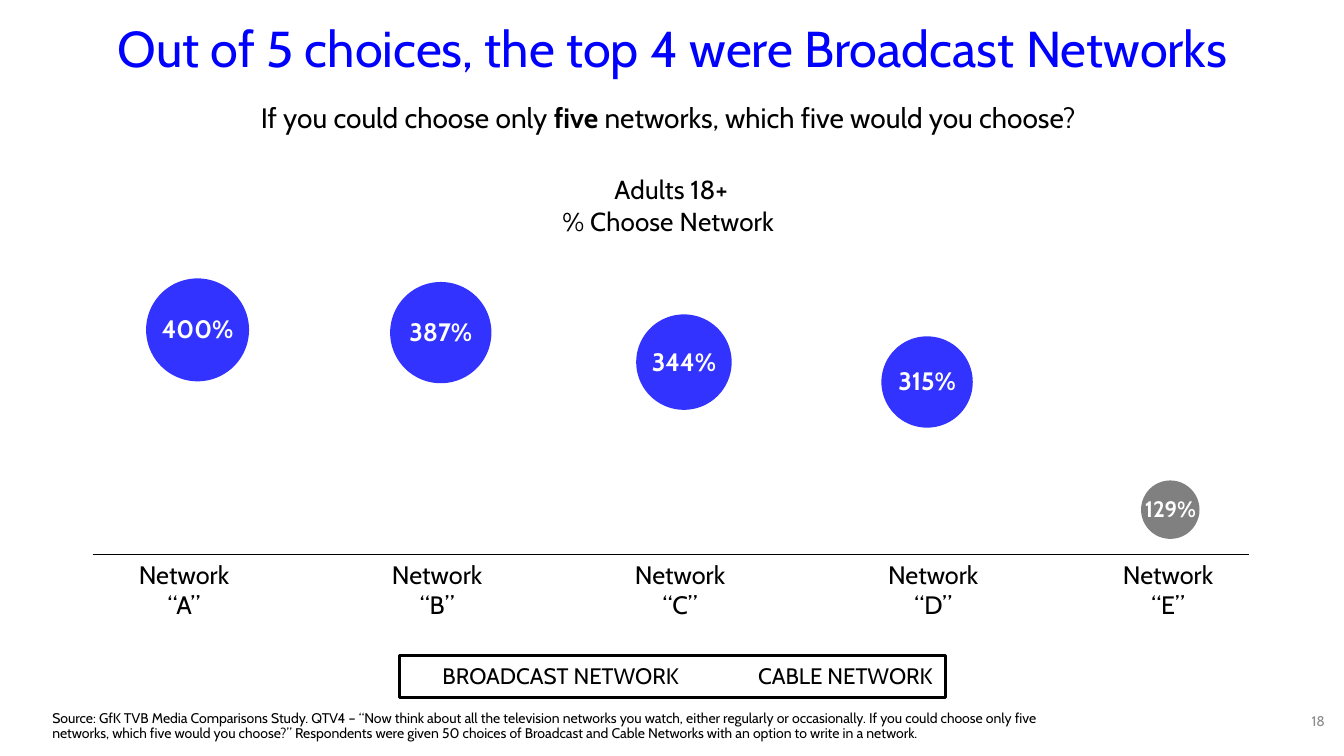
from dataclasses import dataclass

from lxml import etree
from pptx import Presentation
from pptx.chart.data import BubbleChartData
from pptx.dml.color import RGBColor
from pptx.enum import chart as ch, shapes, text
from pptx.oxml import parse_xml
from pptx.oxml.ns import nsdecls, qn
from pptx.util import Inches, Pt


@dataclass(frozen=True)
class Theme:
    font: str = "Cabin"
    black: RGBColor = RGBColor(0, 0, 0)
    white: RGBColor = RGBColor(255, 255, 255)
    title_blue: RGBColor = RGBColor(0, 0, 255)
    broadcast: RGBColor = RGBColor(0x33, 0x33, 0xFF)
    cable: RGBColor = RGBColor(0x80, 0x80, 0x80)
    page_grey: RGBColor = RGBColor(0x8C, 0x8C, 0x8C)
    title: float = 36
    question: float = 20
    chart_title: float = 18.6
    label: float = 18
    legend: float = 16
    small: float = 10


T = Theme()


def style(font, size, color=T.black, bold=False):
    font.name, font.size, font.bold = T.font, Pt(size), bold
    font.color.rgb = color


def add_text(parent, box, words, size, align=text.PP_ALIGN.CENTER,
             anchor=text.MSO_ANCHOR.TOP, color=T.black, wrap=True):
    tf = parent.add_textbox(*map(Inches, box)).text_frame
    tf.word_wrap, tf.vertical_anchor = wrap, anchor
    p = tf.paragraphs[0]
    p.alignment = align
    for i, part in enumerate(words.split("*")):  # *word* is bold
        r = p.add_run()
        r.text = part
        style(r.font, size, color, bold=i % 2 == 1)
    return p


prs = Presentation()
prs.slide_width, prs.slide_height = Inches(13.33), Inches(7.5)
s = prs.slides.add_slide(prs.slide_layouts[5])

# Title
title = s.shapes.title
title.left, title.top, title.width, title.height = map(Inches, (0.46, 0.18, 12.42, 0.66))
tf = title.text_frame
tf.text = "Out of 5 choices, the top 4 were Broadcast Networks"
tf.vertical_anchor = text.MSO_ANCHOR.MIDDLE
p = tf.paragraphs[0]
p.alignment, p.line_spacing = text.PP_ALIGN.CENTER, 0.9
style(p.runs[0].font, T.title, T.title_blue)

# Bubble chart: height and size both follow the share
data = BubbleChartData(number_format="0%")
shares = data.add_series("Series 1")
points = [(0.391, 4.0), (0.387, 3.87), (0.344, 3.44), (0.315, 3.15), (0.129, 1.29)]
for x, (y, size) in enumerate(points, 1):
    shares.add_data_point(x, y, size)
chart = s.shapes.add_chart(ch.XL_CHART_TYPE.BUBBLE, *map(Inches, (0.58, 1.17, 12.42, 5.37)), data).chart
chart.has_legend = False
style(chart.font, T.small)
for axis, low, high in ((chart.category_axis, 0.5, 5.5), (chart.value_axis, -0.05, 0.55)):
    axis.minimum_scale, axis.maximum_scale = low, high
    axis.has_major_gridlines = False
    axis.visible = False

# Bubble colours and labels
series = chart.plots[0].series[0]
series.format.fill.solid()
series.format.fill.fore_color.rgb = T.broadcast
for i in range(len(points)):
    is_cable = i == len(points) - 1
    point = series.points[i]
    point.format.fill.solid()
    point.format.fill.fore_color.rgb = T.cable if is_cable else T.broadcast
    point.format.line.fill.background()
    label = point.data_label
    style(label.font, T.legend if is_cable else T.label, T.white, bold=True)
    label.position = ch.XL_LABEL_POSITION.CENTER
for label in series._element.iter(qn("c:dLbl")):
    label.insert(1, parse_xml(f'<c:numFmt {nsdecls("c")} formatCode="0%" sourceLinked="0"/>'))

# Chart title
tf = chart.chart_title.text_frame
tf.text = "Adults 18+\n% Choose Network "
for p in tf.paragraphs:
    p.alignment = text.PP_ALIGN.CENTER
    style(p.runs[0].font, T.chart_title)

# Fixed places for the chart title and the plot area
places = (("c:title", "", {"x": 0.4, "y": 0.095}),
          ("c:plotArea", '<c:layoutTarget val="inner"/>', {"x": 0.014, "y": 0.19, "w": 0.971, "h": 0.761}))
for tag, target, place in places:
    part = next(chart._chartSpace.iter(qn(tag)))
    for old in part.findall(qn("c:layout")):
        part.remove(old)
    modes = "".join(f'<c:{k}Mode val="edge"/>' for k in "xy")
    values = "".join(f'<c:{k} val="{v}"/>' for k, v in place.items())
    layout = parse_xml(f'<c:layout {nsdecls("c")}><c:manualLayout>{target}{modes}{values}'
                       "</c:manualLayout></c:layout>")
    part.insert(1 if tag == "c:title" else 0, layout)

# Question, source and page number
add_text(s.shapes, (1.59, 0.95, 10.14, 0.44),
         "If you could choose only *five* networks, which five would you choose? ", T.question)
p = add_text(s.shapes, (0.42, 7.01, 10.45, 0.4),
             "Source: GfK TVB Media Comparisons Study. QTV4 – “Now think about all the television networks "
             "you watch, either regularly or occasionally. If you could choose only five networks, which five "
             "would you choose?” Respondents were given 50 choices of Broadcast and Cable Networks with an "
             "option to write in a network.",
             T.small, text.PP_ALIGN.LEFT, text.MSO_ANCHOR.BOTTOM)
p.line_spacing = 0.9
add_text(s.shapes, (12.64, 6.95, 0.6, 0.4), "18", T.small, text.PP_ALIGN.RIGHT,
         text.MSO_ANCHOR.MIDDLE, T.page_grey)

# Network names under the baseline
for name, left in zip("ABCDE", (1.16, 3.67, 6.08, 8.59, 10.92)):
    add_text(s.shapes, (left, 5.5, 1.33, 0.71), f"Network “{name}”", T.label)
baseline = s.shapes.add_connector(shapes.MSO_CONNECTOR.STRAIGHT, *map(Inches, (0.92, 5.5, 12.39, 5.5)))
baseline.line.color.rgb, baseline.line.width = T.black, Pt(0.75)
etree.SubElement(baseline._element.spPr, qn("a:effectLst"))

# Legend
legend = s.shapes.add_group_shape()
frame = legend.shapes.add_shape(shapes.MSO_SHAPE.RECTANGLE, *map(Inches, (3.96, 6.5, 5.42, 0.42)))
frame.shadow.inherit = False
frame.fill.background()
frame.line.color.rgb, frame.line.width = T.black, Pt(2)
for words, left, width in (("BROADCAST NETWORK", 4.29, 2.55), ("CABLE NETWORK", 7.42, 1.95)):
    add_text(legend.shapes, (left, 6.52, width, 0.37), words, T.legend, text.PP_ALIGN.LEFT, wrap=False)

prs.save("out.pptx")
